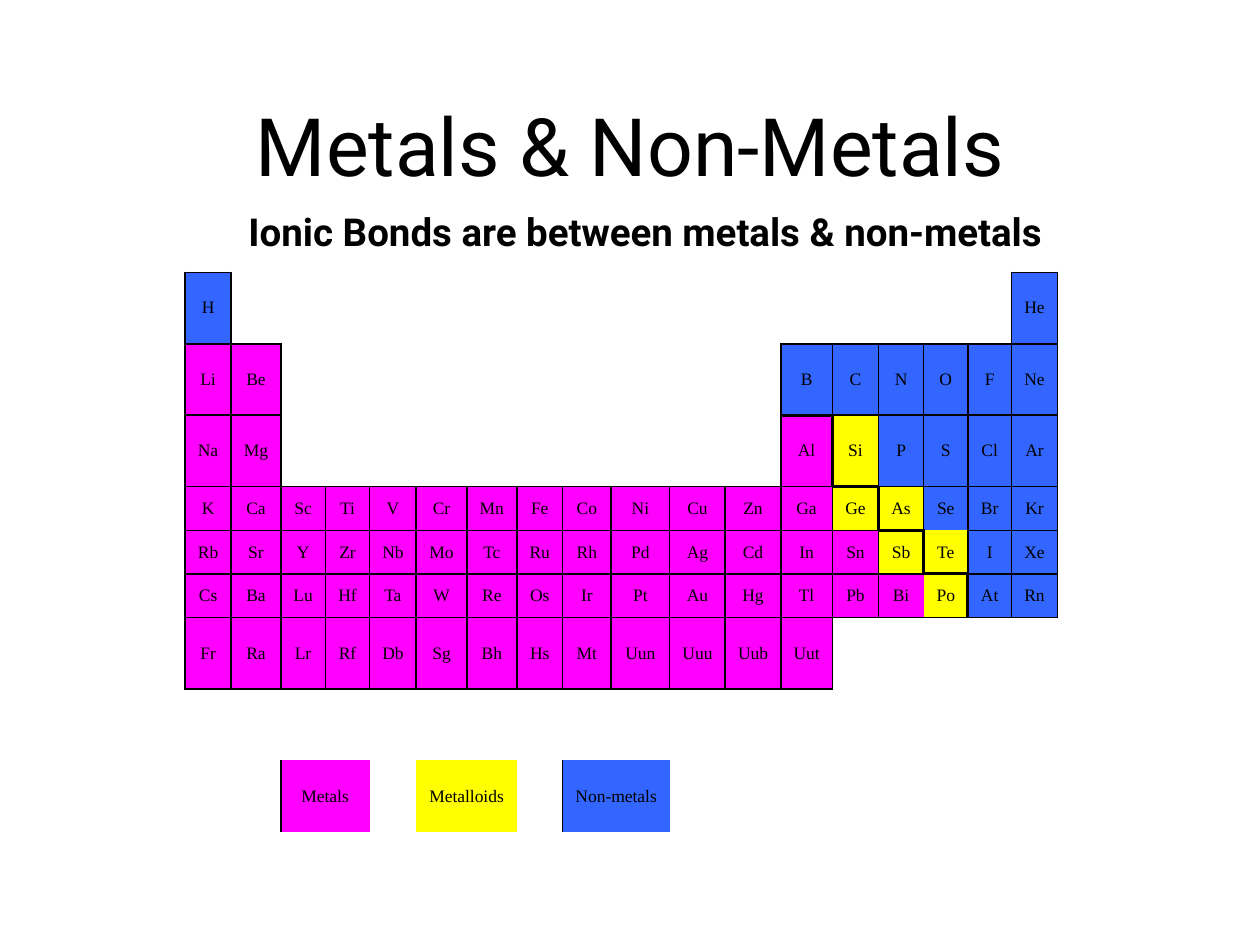
from dataclasses import dataclass

from lxml.etree import SubElement
from pptx import Presentation
from pptx.dml.color import RGBColor
from pptx.enum.text import MSO_ANCHOR, PP_ALIGN
from pptx.oxml.ns import qn
from pptx.util import Cm, Pt

BLACK = "000000"
METAL, METALLOID, NONMETAL = "FF00FF", "FFFF00", "3366FF"
METALLOIDS = set("Si Ge As Sb Te Po".split())
NONMETALS = set("H He B C N O F Ne P S Cl Ar Se Br Kr I Xe At Rn".split())

# Edges of the staircase, and edges left open, named by the cell before them.
THICK_BELOW = {"B", "Si", "As", "Te"}
THICK_RIGHT = {"Al", "Ge", "Sb", "Po"}
OPEN_BELOW = {"Se"}
OPEN_RIGHT = {"Bi"}

COLUMN_WIDTHS = [0.93, 1.0, 0.9, 0.89, 0.94, 1.02, 1.01, 0.92, 0.98,
                 1.18, 1.12, 1.12, 1.04, 0.93, 0.91, 0.89, 0.88, 0.93]
TALL, LOW = 1.44, 0.88


@dataclass(frozen=True)
class Period:
    """Symbols that start at the left edge and symbols that end at the right."""
    left: str
    right: str = ""
    height: float = TALL

    def symbols(self) -> list[str]:
        left, right = self.left.split(), self.right.split()
        return left + [""] * (len(COLUMN_WIDTHS) - len(left) - len(right)) + right


@dataclass(frozen=True)
class LegendEntry:
    label: str
    column: int
    colour: str
    has_left_line: bool


PERIODS = [
    Period("H", "He"),
    Period("Li Be", "B C N O F Ne"),
    Period("Na Mg", "Al Si P S Cl Ar"),
    Period("K Ca Sc Ti V Cr Mn Fe Co Ni Cu Zn Ga Ge As Se Br Kr", height=LOW),
    Period("Rb Sr Y Zr Nb Mo Tc Ru Rh Pd Ag Cd In Sn Sb Te I Xe", height=LOW),
    Period("Cs Ba Lu Hf Ta W Re Os Ir Pt Au Hg Tl Pb Bi Po At Rn", height=LOW),
    Period("Fr Ra Lr Rf Db Sg Bh Hs Mt Uun Uuu Uub Uut"),
]
LEGEND = [
    LegendEntry("Metals", 2, METAL, True),
    LegendEntry("Metalloids", 5, METALLOID, False),
    LegendEntry("Non-metals", 8, NONMETAL, True),
]
ROW_HEIGHTS = [period.height for period in PERIODS] + [TALL, TALL]
GRID = [period.symbols() for period in PERIODS]


def rgb(colour: str) -> RGBColor:
    return RGBColor.from_string(colour)


def format_text(text_frame, text: str, font_name: str, size: float, bold: bool = False) -> None:
    text_frame.text = text
    paragraph = text_frame.paragraphs[0]
    paragraph.alignment = PP_ALIGN.CENTER
    font = paragraph.runs[0].font
    font.name, font.size, font.bold = font_name, Pt(size), bold
    font.color.rgb = rgb(BLACK)


def symbol_at(row: int, column: int) -> str:
    inside = 0 <= row < len(GRID) and 0 <= column < len(COLUMN_WIDTHS)
    return GRID[row][column] if inside else ""


def edge_width(before: str, after: str, thick: set[str], hidden: set[str]) -> int:
    """Line width in points between two neighbouring cells; 0 is no line."""
    if before in hidden or not (before or after):
        return 0
    return 2 if before in thick else 1


def cell_edges(row: int, column: int) -> dict[str, int]:
    here = symbol_at(row, column)
    return {
        "L": edge_width(symbol_at(row, column - 1), here, THICK_RIGHT, OPEN_RIGHT),
        "R": edge_width(here, symbol_at(row, column + 1), THICK_RIGHT, OPEN_RIGHT),
        "T": edge_width(symbol_at(row - 1, column), here, THICK_BELOW, OPEN_BELOW),
        "B": edge_width(here, symbol_at(row + 1, column), THICK_BELOW, OPEN_BELOW),
    }


def set_borders(cell, edges: dict[str, int]) -> None:
    properties = cell._tc.get_or_add_tcPr()
    for side, width in edges.items():
        line = SubElement(properties, qn(f"a:ln{side}"), w=str(Pt(width)))
        if width:
            fill = SubElement(line, qn("a:solidFill"))
            SubElement(fill, qn("a:srgbClr"), val=BLACK)
        else:
            SubElement(line, qn("a:noFill"))


def fill_cell(cell, text: str, colour: str) -> None:
    cell.fill.solid()
    cell.fill.fore_color.rgb = rgb(colour)
    cell.vertical_anchor = MSO_ANCHOR.MIDDLE
    format_text(cell.text_frame, text, "Times New Roman", 10)


def element_colour(symbol: str) -> str:
    if symbol in METALLOIDS:
        return METALLOID
    return NONMETAL if symbol in NONMETALS else METAL


def add_periodic_table(slide) -> None:
    frame = slide.shapes.add_table(
        len(ROW_HEIGHTS), len(COLUMN_WIDTHS), Cm(3.73), Cm(5.49),
        Cm(sum(COLUMN_WIDTHS)), Cm(sum(ROW_HEIGHTS)))
    table = frame.table
    table.first_row = table.horz_banding = False
    for column, width in zip(table.columns, COLUMN_WIDTHS):
        column.width = Cm(width)
    for row, height in zip(table.rows, ROW_HEIGHTS):
        row.height = Cm(height)

    legend_row = len(ROW_HEIGHTS) - 1
    lined_columns = {entry.column for entry in LEGEND if entry.has_left_line}
    for row in range(len(ROW_HEIGHTS)):
        for column in range(len(COLUMN_WIDTHS)):
            cell = table.cell(row, column)
            cell.margin_left = cell.margin_right = 0
            cell.margin_top = cell.margin_bottom = 0
            edges = cell_edges(row, column)
            if row == legend_row:
                edges["L"] = int(column in lined_columns)
                edges["R"] = int(column + 1 in lined_columns)
            set_borders(cell, edges)
            symbol = symbol_at(row, column)
            if symbol:
                fill_cell(cell, symbol, element_colour(symbol))
            else:
                cell.fill.background()

    for entry in LEGEND:
        cell = table.cell(legend_row, entry.column)
        cell.merge(table.cell(legend_row, entry.column + 1))
        fill_cell(cell, entry.label, entry.colour)


def main() -> None:
    presentation = Presentation()
    presentation.slide_width, presentation.slide_height = Cm(25.4), Cm(19.05)
    slide = presentation.slides.add_slide(presentation.slide_layouts[5])

    title = slide.shapes.title
    title.left, title.top, title.width, title.height = Cm(1.52), Cm(0.3), Cm(22.35), Cm(3.71)
    title.text_frame.vertical_anchor = MSO_ANCHOR.BOTTOM
    format_text(title.text_frame, "Metals & Non-Metals", "Roboto", 46)

    subtitle = slide.shapes.add_textbox(Cm(1.32), Cm(4.06), Cm(23.37), Cm(1.19))
    subtitle.text_frame.word_wrap = True
    format_text(subtitle.text_frame, "Ionic Bonds are between metals & non-metals",
                "Roboto", 22, bold=True)

    add_periodic_table(slide)
    presentation.save("out.pptx")


if __name__ == "__main__":
    main()
